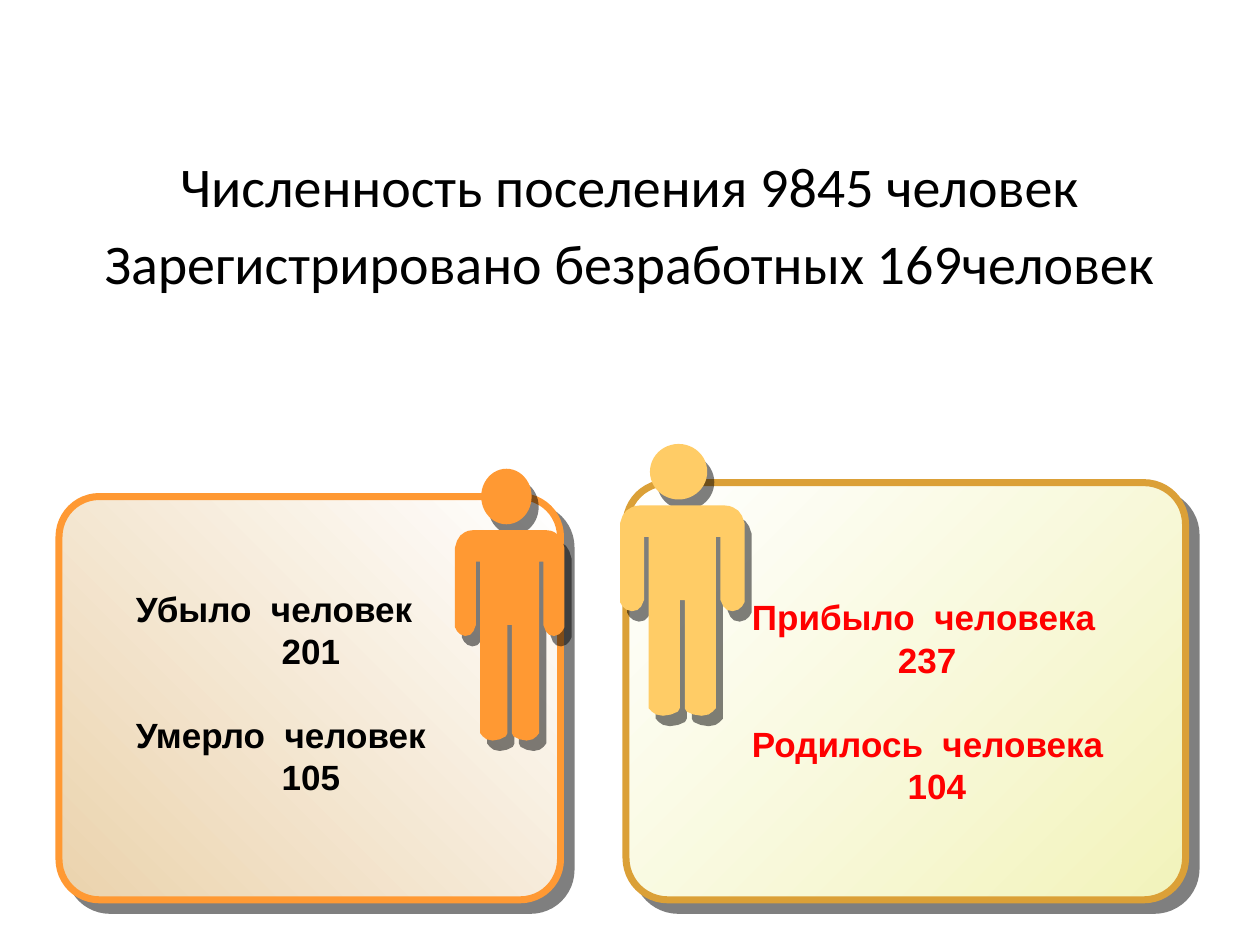
from lxml.etree import SubElement
from pptx import Presentation
from pptx.dml.color import RGBColor
from pptx.enum.shapes import MSO_SHAPE as Shape
from pptx.enum.text import PP_ALIGN as Align
from pptx.oxml.ns import qn
from pptx.util import Cm, Pt

COLORS = {
    "black": "000000", "red": "FF0000", "white": "FFFFFF",
    "orange": "FF9933", "sand": "EBD3AD",
    "yellow": "FFCC66", "gold": "DBA037", "cream": "F2F3BB",
}

# Left half of the body outline, in percent of its width and height
HALF_BODY = [
    (16, 0), (12, 0.3), (9, 1), (5, 2.5), (2, 5), (0, 8.5),           # shoulder
    (0, 46), (2, 48), (5, 49.5), (9.5, 50.3), (14, 49.7), (17, 48),   # arm
    (18.5, 46), (19.3, 45), (19.3, 15), (23, 15),
    (23, 96.4), (25.5, 98), (29, 99.4), (34.5, 100), (41, 99.4),      # leg
    (46.5, 98), (48, 96.4), (48, 45),
]
BODY = HALF_BODY + [(100 - x, y) for x, y in reversed(HALF_BODY)]


def color(name):
    return RGBColor.from_string(COLORS[name])


def add_shadow(shape, distance, angle):
    effects = SubElement(shape._element.spPr, qn("a:effectLst"))
    shadow = SubElement(effects, qn("a:outerShdw"), dist=str(Pt(distance)),
                        dir=str(angle * 60000), algn="ctr", rotWithShape="0")
    black = SubElement(shadow, qn("a:srgbClr"), val=COLORS["black"])
    SubElement(black, qn("a:alpha"), val="50000")


def add_run(paragraph, text, font, size, color_name, bold=False):
    run = paragraph.add_run()
    run.text = text
    run.font.name, run.font.size, run.font.bold = font, Pt(size), bold
    run.font.color.rgb = color(color_name)
    return run


def add_text_frame(slide, left, top, width, height):
    box = slide.shapes.add_textbox(Cm(left), Cm(top), Cm(width), Cm(height))
    box.text_frame.word_wrap = True
    return box.text_frame


def add_headline(slide, lines):
    frame = add_text_frame(slide, 1.27, 2.92, 22.86, 14.1)
    for index, line in enumerate(lines):
        paragraph = frame.add_paragraph() if index else frame.paragraphs[0]
        paragraph.alignment = Align.CENTER
        if index:
            paragraph.space_before = Pt(6)
        add_run(paragraph, line, "Calibri", 32, "black")


def add_card(slide, left, top, width, height, border, start, end, angle):
    card = slide.shapes.add_shape(Shape.ROUNDED_RECTANGLE,
                                  Cm(left), Cm(top), Cm(width), Cm(height))
    card.adjustments[0] = 0.1
    card.fill.gradient()
    card.fill.gradient_angle = angle
    for stop, name in zip(card.fill.gradient_stops, (start, end)):
        stop.color.rgb = color(name)
    card.line.color.rgb = color(border)
    card.line.width = Pt(4)
    add_shadow(card, 8.5, 45)


def add_person(slide, left, top, width, color_name):
    body_height, head_height = 4.24, 1.12
    head = slide.shapes.add_shape(
        Shape.OVAL, Cm(left + 0.24 * width), Cm(top - 1.24),
        Cm(0.46 * width), Cm(head_height))
    points = [(Cm(left + x / 100 * width), Cm(top + y / 100 * body_height))
              for x, y in BODY]
    outline = slide.shapes.build_freeform(*points[0])
    outline.add_line_segments(points[1:], close=True)
    for part in (head, outline.convert_to_shape()):
        part.fill.solid()
        part.fill.fore_color.rgb = color(color_name)
        part.line.fill.background()
        add_shadow(part, 7.2, 56)


def add_counts(slide, left, top, width, color_name, counts):
    """Each count is a label, its number and the indent of the number."""
    frame = add_text_frame(slide, left, top, width, 4.52)
    for index, (label, number, indent) in enumerate(counts):
        heading = frame.add_paragraph() if index else frame.paragraphs[0]
        if index:
            heading.space_before = Pt(24)
        first, second = label.split()
        add_run(heading, first, "Arial", 20, color_name, bold=True)
        gap = add_run(heading, " ", "Arial", 20, color_name, bold=True)
        gap.font._element.set("spc", "550")  # wide word gap
        add_run(heading, second, "Arial", 20, color_name, bold=True)

        value = frame.add_paragraph()
        value._p.get_or_add_pPr().set("marL", str(Cm(indent)))
        add_run(value, number, "Arial", 20, color_name, bold=True)
        heading.line_spacing = value.line_spacing = Pt(24)


def main():
    prs = Presentation()
    prs.slide_width, prs.slide_height = Cm(25.4), Cm(19.05)
    slide = prs.slides.add_slide(prs.slide_layouts[6])

    # Population and unemployment
    add_headline(slide, ["Численность поселения 9845 человек",
                         "Зарегистрировано безработных 169человек"])

    # Departures and deaths
    add_card(slide, 1.19, 10.01, 10.11, 8.13, "orange", "sand", "white", 45)
    add_person(slide, 9.17, 10.69, 2.21, "orange")
    add_counts(slide, 2.49, 11.71, 7.72, "black",
               [("Убыло человек", "201", 2.94),
                ("Умерло человек", "105", 2.94)])

    # Arrivals and births
    add_card(slide, 12.62, 9.73, 11.28, 8.41, "gold", "white", "cream", 315)
    add_counts(slide, 14.91, 11.89, 9.19, "red",
               [("Прибыло человека", "237", 2.94),
                ("Родилось человека", "104", 3.14)])
    add_person(slide, 12.5, 10.19, 2.51, "yellow")

    prs.save("out.pptx")


if __name__ == "__main__":
    main()
